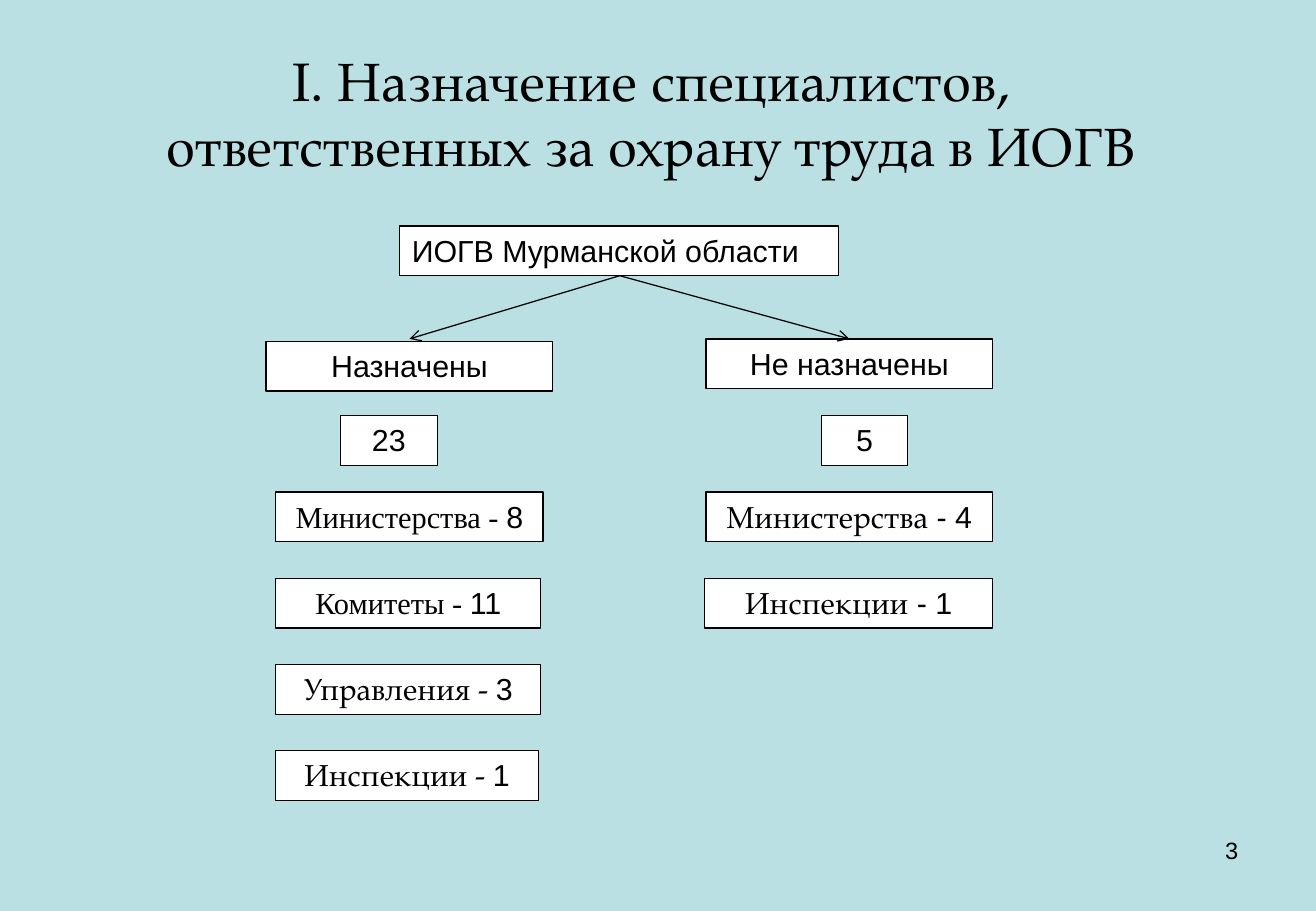
"""Builds the slide on labour protection specialists in regional authorities."""
import dataclasses

import lxml.etree
import pptx
import pptx.dml.color
import pptx.enum.shapes
import pptx.enum.text
import pptx.oxml.ns
import pptx.util

PX = 9144
ALIGN = pptx.enum.text.PP_ALIGN
ANCHOR = pptx.enum.text.MSO_ANCHOR


@dataclasses.dataclass(frozen=True)
class Theme:
    background: str = "BBE0E3"
    box_fill: str = "FFFFFF"
    ink: str = "000000"
    sans: str = "Arial"
    serif: str = "Times New Roman"
    display: str = "TeX Gyre Pagella"
    title_size: int = 32
    box_size: int = 18
    number_size: int = 14
    line_width: float = 0.75


THEME = Theme()
BOX_HEIGHT = 41
ROW_TOP = 405
ROW_PITCH = 71


def px(*lengths):
    return [length * PX for length in lengths]


def color(value):
    return pptx.dml.color.RGBColor.from_string(value)


def write(shape, parts, size, align, anchor=ANCHOR.TOP):
    frame = shape.text_frame
    frame.word_wrap = True
    frame.vertical_anchor = anchor
    paragraph = frame.paragraphs[0]
    paragraph.text = parts[0][0]
    paragraph.alignment = align
    for words, _ in parts[1:]:
        paragraph.add_run().text = words
    fonts = [font for _, font in parts]
    for index, run in enumerate(paragraph.runs):
        run.font.name = fonts[min(index, len(fonts) - 1)]
        run.font.size = pptx.util.Pt(size)
        run.font.color.rgb = color(THEME.ink)


def add_text(slide, bounds, words, font, size, align, anchor=ANCHOR.TOP):
    shape = slide.shapes.add_textbox(*px(*bounds))
    write(shape, [(words, font)], size, align, anchor)


def add_box(slide, left, top, width, parts, align=ALIGN.CENTER):
    shape = slide.shapes.add_shape(
        pptx.enum.shapes.MSO_SHAPE.RECTANGLE, *px(left, top, width, BOX_HEIGHT))
    shape.shadow.inherit = False
    shape.fill.solid()
    shape.fill.fore_color.rgb = color(THEME.box_fill)
    shape.line.color.rgb = color(THEME.ink)
    shape.line.width = pptx.util.Pt(THEME.line_width)
    write(shape, parts, THEME.box_size, align)


def add_column(slide, rows):
    for index, (left, width, parts) in enumerate(rows):
        add_box(slide, left, ROW_TOP + index * ROW_PITCH, width, parts)


def add_arrow(slide, start, end):
    arrow = slide.shapes.add_connector(
        pptx.enum.shapes.MSO_CONNECTOR.STRAIGHT, *px(*start, *end))
    arrow.line.color.rgb = color(THEME.ink)
    arrow.line.width = pptx.util.Pt(THEME.line_width)
    qualified = pptx.oxml.ns.qn
    lxml.etree.SubElement(arrow.line._get_or_add_ln(), qualified("a:tailEnd"), type="arrow")
    lxml.etree.SubElement(arrow._element.spPr, qualified("a:effectLst"))


def main():
    presentation = pptx.Presentation()
    presentation.slide_width, presentation.slide_height = px(1083, 750)
    slide = presentation.slides.add_slide(presentation.slide_layouts[6])
    slide.background.fill.solid()
    slide.background.fill.fore_color.rgb = color(THEME.background)

    add_text(slide, (54, 30, 975, 125),
             "I. Назначение специалистов, \vответственных за охрану труда в ИОГВ ",
             THEME.display, THEME.title_size, ALIGN.CENTER, ANCHOR.MIDDLE)
    add_text(slide, (776, 683, 253, 52), "3", THEME.sans, THEME.number_size, ALIGN.RIGHT)

    add_box(slide, 329, 186, 361, [("ИОГВ Мурманской области", THEME.sans)], ALIGN.LEFT)
    add_box(slide, 219, 281, 236, [("Назначены", THEME.sans)])
    add_box(slide, 581, 279, 236, [("Не назначены", THEME.sans)])
    add_box(slide, 280, 342, 80, [("23", THEME.sans)])
    add_box(slide, 676, 342, 71, [("5", THEME.sans)])

    add_column(slide, [
        (227, 220, [("Министерства - ", THEME.serif), ("8", THEME.sans)]),
        (227, 218, [("Комитеты - ", THEME.serif), ("11", THEME.sans)]),
        (227, 218, [("Управления - ", THEME.display), ("3", THEME.sans)]),
        (227, 216, [("Инспекции - ", THEME.display), ("1", THEME.sans)]),
    ])
    add_column(slide, [
        (581, 236, [("Министерства", THEME.display), (" - 4", THEME.sans)]),
        (580, 237, [("Инспекции", THEME.display), (" - 1", THEME.sans)]),
    ])

    for end in ((337, 279), (699, 279)):
        add_arrow(slide, (510, 227), end)
    presentation.save("out.pptx")


if __name__ == "__main__":
    main()
